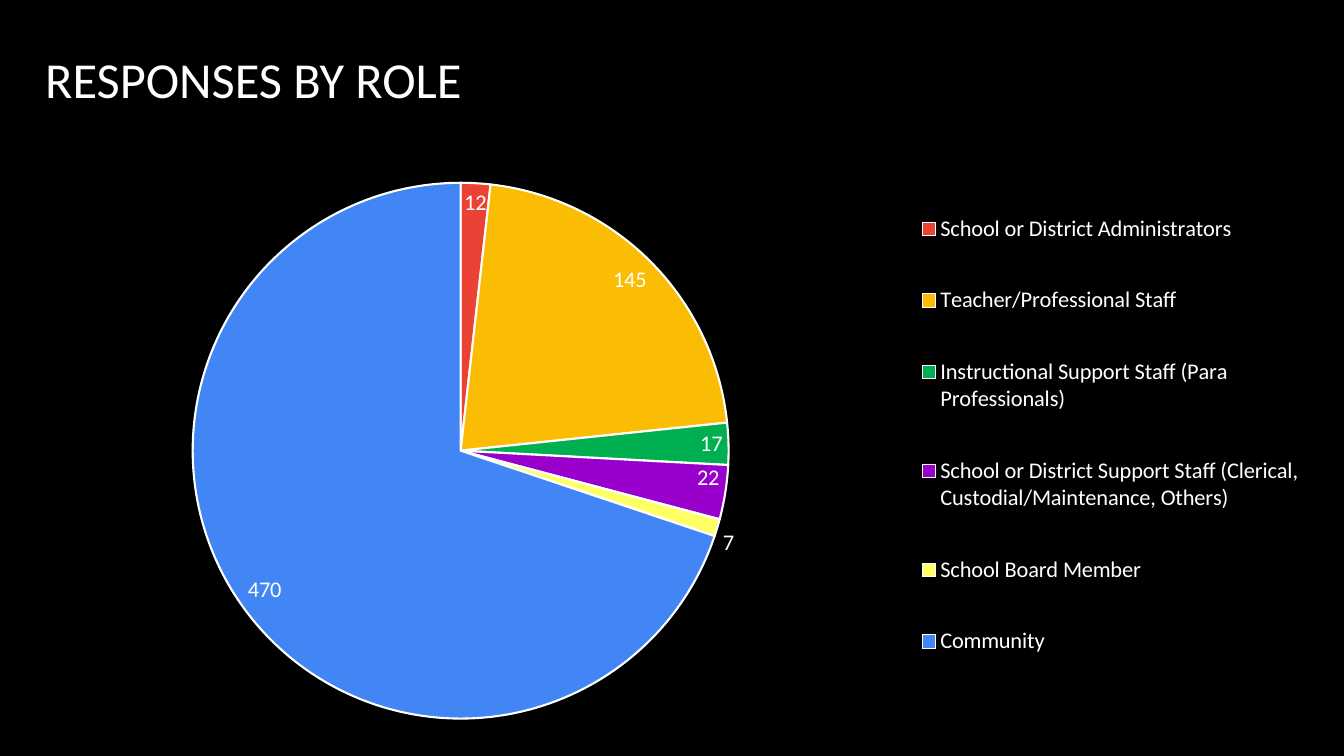
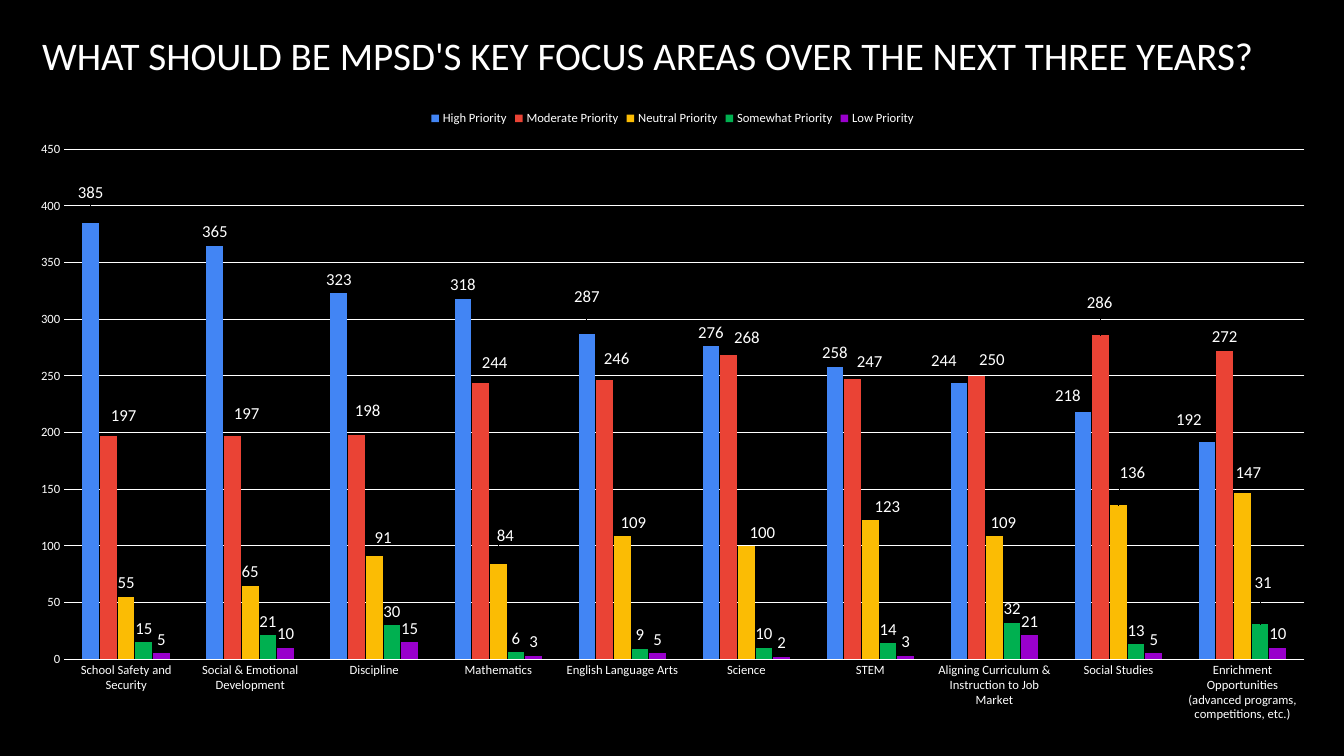
from pptx import Presentation
from pptx.chart.data import CategoryChartData
from pptx.dml.color import RGBColor
from pptx.enum.chart import XL_CHART_TYPE as ChartType
from pptx.enum.chart import XL_LABEL_POSITION as LabelPosition
from pptx.enum.chart import XL_LEGEND_POSITION as LegendPosition
from pptx.enum.chart import XL_TICK_MARK as TickMark
from pptx.enum.text import MSO_ANCHOR as Anchor
from pptx.oxml import parse_xml
from pptx.oxml.ns import nsdecls, qn
from pptx.util import Inches, Pt

FONT = "Calibri"
COLORS = {
    "background": "000000", "text": "FFFFFF", "blue": "4285F4", "red": "EA4335",
    "amber": "FBBC04", "green": "00B050", "purple": "9900CC", "yellow": "FFFF66",
}

# Role, responses, colour, label position
ROLES = [
    ("School or District Administrators", 12, "red", LabelPosition.INSIDE_END),
    ("Teacher/Professional Staff", 145, "amber", LabelPosition.INSIDE_END),
    ("Instructional Support Staff (Para Professionals)", 17, "green", LabelPosition.INSIDE_END),
    ("School or District Support Staff (Clerical, Custodial/Maintenance, Others)", 22,
     "purple", LabelPosition.INSIDE_END),
    ("School Board Member", 7, "yellow", LabelPosition.OUTSIDE_END),
    ("Community", 470, "blue", LabelPosition.INSIDE_END),
]

FOCUS_AREAS = [
    "School Safety and Security", "Social & Emotional Development", "Discipline",
    "Mathematics", "English Language Arts", "Science", "STEM",
    "Aligning Curriculum & Instruction to Job Market", "Social Studies",
    "Enrichment Opportunities (advanced programs, competitions, etc.)",
]

# Priority, colour, votes, and the labels moved (right, down) in inches
PRIORITIES = [
    ("High Priority", "blue", [385, 365, 323, 318, 287, 276, 258, 244, 218, 192],
     {0: (0, -0.16), 4: (0, -0.23), 7: (-0.15, -0.08), 8: (-0.15, -0.03), 9: (-0.18, -0.08)}),
    ("Moderate Priority", "red", [197, 197, 198, 244, 246, 268, 247, 250, 286, 272],
     {0: (0.15, -0.06), 1: (0.14, -0.08), 2: (0.11, -0.1), 3: (0.14, -0.06), 4: (0.12, -0.08),
      5: (0.18, -0.04), 6: (0.17, -0.04), 7: (0.15, -0.02), 8: (-0.01, -0.18)}),
    ("Neutral Priority", "amber", [55, 65, 91, 84, 109, 100, 123, 109, 136, 147],
     {2: (0.09, -0.04), 3: (0.07, -0.14), 4: (0.11, 0.01), 5: (0.16, 0.01),
      6: (0.17, 0.01), 7: (0.09, 0.01), 8: (0.14, -0.18), 9: (0.06, -0.06)}),
    ("Somewhat Priority", "green", [15, 21, 30, 6, 9, 10, 14, 32, 13, 31], {9: (0.03, -0.27)}),
    ("Low Priority", "purple", [5, 10, 15, 3, 5, 2, 3, 21, 5, 10], {}),
]


def rgb(name):
    return RGBColor.from_string(COLORS[name])


def set_font(font, size, color="text"):
    font.name = FONT
    font.size = Pt(size)
    font.bold = False
    font.color.rgb = rgb(color)


def set_fill(part, color):
    part.format.fill.solid()
    part.format.fill.fore_color.rgb = rgb(color)


def set_line(line, width):
    line.color.rgb = rgb("text")
    line.width = Pt(width)


def write_text(page, box, text, size, color="text", anchor=Anchor.MIDDLE):
    shape = page.shapes.add_textbox(*map(Inches, box))
    frame = shape.text_frame
    frame.word_wrap = True
    frame.vertical_anchor = anchor
    span = frame.paragraphs[0].add_run()
    span.text = text
    set_font(span.font, size, color)


def set_layout(parent, index, inner=False, **fractions):
    """Place a chart part by fractions of the chart's size."""
    for old in parent.findall(qn("c:layout")):
        parent.remove(old)
    tags = '<c:layoutTarget val="inner"/>' if inner else ""
    if "w" in fractions:
        tags += '<c:xMode val="edge"/><c:yMode val="edge"/>'
    tags += "".join(f'<c:{key} val="{value:.4f}"/>' for key, value in fractions.items())
    parent.insert(index, parse_xml(
        f'<c:layout {nsdecls("c")}><c:manualLayout>{tags}</c:manualLayout></c:layout>'))


def add_page(deck, title, title_box, title_size):
    page = deck.slides.add_slide(deck.slide_layouts[6])
    page.background.fill.solid()
    page.background.fill.fore_color.rgb = rgb("background")
    write_text(page, title_box, title, title_size)
    return page


def add_chart(page, box, kind, categories, series, legend_position, legend_size):
    data = CategoryChartData()
    data.categories = categories
    for name, values in series:
        data.add_series(name, values)
    chart = page.shapes.add_chart(kind, *map(Inches, box), data).chart
    chart.has_title = False
    set_font(chart.font, 10)
    chart.has_legend = True
    chart.legend.position = legend_position
    chart.legend.include_in_layout = False
    set_font(chart.legend.font, legend_size)
    return chart


def add_role_pie(page, box):
    names, counts, colors, positions = zip(*ROLES)
    chart = add_chart(page, box, ChartType.PIE, names, [("Series 1", counts)],
                      LegendPosition.RIGHT, 16)
    plot = chart.plots[0]
    plot.vary_by_categories = True
    # Slices and their labels
    for index, (color, position) in enumerate(zip(colors, positions)):
        point = plot.series[0].points[index]
        set_fill(point, color)
        set_line(point.format.line, 1.5)
        set_font(point.data_label.font, 16)
        point.data_label.position = position
    # Circle on the left, spread legend on the right
    set_layout(chart.element.find(".//" + qn("c:plotArea")), 0, inner=True,
               x=0.123, y=0.08, w=0.42, h=0.898)
    set_layout(chart.element.find(".//" + qn("c:legend")), 1, x=0.689, y=0.06, w=0.305, h=0.886)


def style_axes(chart):
    for axis in (chart.category_axis, chart.value_axis):
        axis.major_tick_mark = axis.minor_tick_mark = TickMark.NONE
        set_font(axis.tick_labels.font, 9)
    set_line(chart.category_axis.format.line, 0.75)
    votes = chart.value_axis
    votes.minimum_scale, votes.maximum_scale, votes.major_unit = 0, 450, 50
    votes.format.line.fill.background()
    votes.has_major_gridlines = True
    set_line(votes.major_gridlines.format.line, 0.75)


def add_priority_columns(page, box):
    chart = add_chart(page, box, ChartType.COLUMN_CLUSTERED, FOCUS_AREAS,
                      [(name, votes) for name, _, votes, _ in PRIORITIES],
                      LegendPosition.TOP, 9)
    style_axes(chart)
    plot = chart.plots[0]
    plot.vary_by_categories = False
    plot.gap_width, plot.overlap = 219, -6
    # Column colours and value labels
    series_tags = chart.element.findall(".//" + qn("c:ser"))
    for series, tag, (_, color, _, moves) in zip(plot.series, series_tags, PRIORITIES):
        set_fill(series, color)
        labels = series.data_labels
        labels.show_value = True
        labels.position = LabelPosition.OUTSIDE_END
        set_font(labels.font, 12)
        for index in moves:
            label = series.points[index].data_label
            set_font(label.font, 12)
            label.position = LabelPosition.OUTSIDE_END
        for label_tag, (right, down) in zip(tag.findall(".//" + qn("c:dLbl")), moves.values()):
            set_layout(label_tag, 1, x=right / box[2], y=down / box[3])
    set_layout(chart.element.find(".//" + qn("c:plotArea")), 0, inner=True,
               x=0.038, y=0.078, w=0.942, h=0.803)


def main():
    deck = Presentation()
    deck.slide_width, deck.slide_height = Inches(13.33), Inches(7.5)

    # Responses by role
    page = add_page(deck, "RESPONSES BY ROLE", (0.35, 0.35, 11.08, 0.86), 36)
    add_role_pie(page, (0.35, 1.34, 12.67, 5.92))

    # Focus areas
    page = add_page(deck, "WHAT SHOULD BE MPSD'S KEY FOCUS AREAS OVER THE NEXT THREE YEARS?",
                    (0.32, 0.21, 12.88, 0.66), 27.9)
    add_priority_columns(page, (0.14, 0.99, 13.06, 6.3))

    deck.save("out.pptx")


if __name__ == "__main__":
    main()
